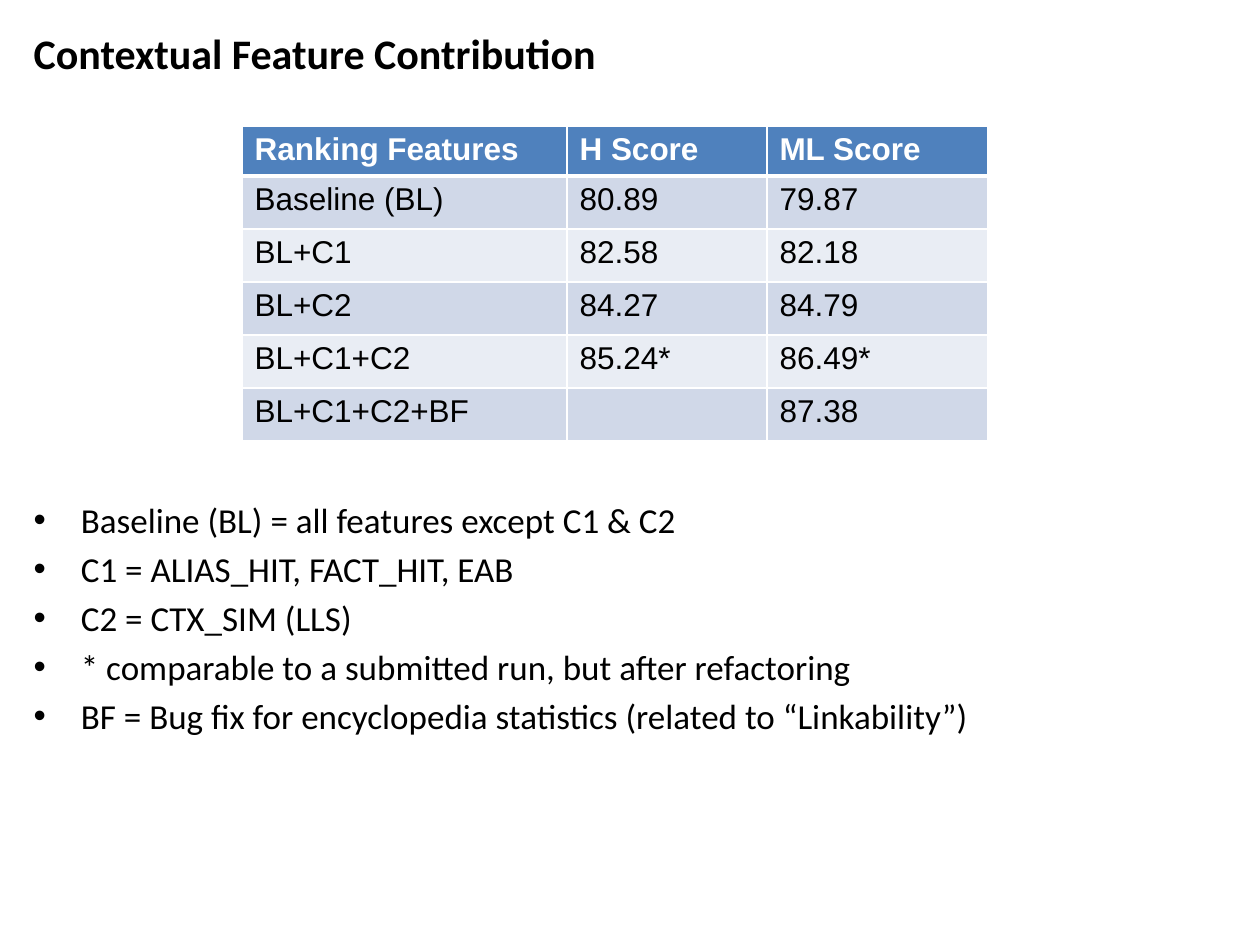
from lxml.etree import SubElement
from pptx import Presentation
from pptx.dml.color import RGBColor
from pptx.enum.text import MSO_ANCHOR, MSO_AUTO_SIZE, PP_ALIGN
from pptx.oxml.ns import qn
from pptx.util import Emu, Pt

PX = 914400 // 126
BLACK = RGBColor(0, 0, 0)
WHITE = RGBColor(255, 255, 255)
BLUE = RGBColor(0x4F, 0x81, 0xBD)
BANDS = RGBColor(0xE9, 0xED, 0xF4), RGBColor(0xD0, 0xD8, 0xE8)

SCORES = [
    ("Ranking Features", "H Score", "ML Score"),
    ("Baseline (BL)", "80.89", "79.87"),
    ("BL+C1", "82.58", "82.18"),
    ("BL+C2", "84.27", "84.79"),
    ("BL+C1+C2", "85.24*", "86.49*"),
    ("BL+C1+C2+BF", "", "87.38"),
]
WIDTHS = 325, 200, 221
HEIGHTS = [50] + [53] * 5
NOTES = [
    "Baseline (BL) = all features except C1 & C2",
    "C1 = ALIAS_HIT, FACT_HIT, EAB",
    "C2 = CTX_SIM (LLS)",
    "* comparable to a submitted run, but after refactoring",
    "BF = Bug fix for encyclopedia statistics (related to “Linkability”)",
]


def px(n):
    return Emu(n * PX)


def place(shape, box):
    shape.left, shape.top, shape.width, shape.height = map(px, box)


def style(para, font, size, color, bold=False):
    for run in para.runs:
        run.font.name = font
        run.font.size = Pt(size)
        run.font.color.rgb = color
        run.font.bold = bold


def add_title(slide, box, text):
    title = slide.shapes.title
    place(title, box)
    frame = title.text_frame
    frame.text = text
    frame.auto_size = MSO_AUTO_SIZE.NONE
    frame.vertical_anchor = MSO_ANCHOR.MIDDLE
    para = frame.paragraphs[0]
    para.alignment = PP_ALIGN.LEFT
    style(para, "Calibri", 24, BLACK, True)


def add_notes(slide, box, lines):
    """Fill the body placeholder; bullets and indents come from the template."""
    body = slide.placeholders[1]
    place(body, box)
    frame = body.text_frame
    frame.text = "\n".join(lines)
    frame.auto_size = MSO_AUTO_SIZE.NONE
    for para in frame.paragraphs:
        style(para, "Calibri", 20, BLACK)
    frame.paragraphs[0].space_before = Pt(0)


def add_rules(cell, low):
    """Draw white cell borders, with the bottom one low points wide."""
    props = cell._tc.get_or_add_tcPr()
    for side, size in ("L", 1), ("R", 1), ("T", 1), ("B", low):
        line = SubElement(props, qn(f"a:ln{side}"), w=str(Pt(size)))
        fill = SubElement(line, qn("a:solidFill"))
        SubElement(fill, qn("a:srgbClr"), val=str(WHITE))


def add_scores(slide, left, top):
    box = map(px, (left, top, sum(WIDTHS), sum(HEIGHTS)))
    table = slide.shapes.add_table(len(SCORES), len(WIDTHS), *box).table
    for col, width in zip(table.columns, WIDTHS):
        col.width = px(width)
    for i, (row, height) in enumerate(zip(table.rows, HEIGHTS)):
        row.height = px(height)
        head = i == 0
        for cell, text in zip(row.cells, SCORES[i]):
            cell.text = text
            style(cell.text_frame.paragraphs[0], "Arial", 18,
                  WHITE if head else BLACK, head)
            # The rule below the header is shared with the first row's top.
            add_rules(cell, 3 if head else 1)
            if i == 1:
                cell._tc.tcPr.find(qn("a:lnT")).set("w", str(Pt(3)))
            cell.fill.solid()
            cell.fill.fore_color.rgb = BLUE if head else BANDS[i % 2]


def main():
    deck = Presentation()
    deck.slide_width, deck.slide_height = px(1260), px(945)
    slide = deck.slides.add_slide(deck.slide_layouts[1])
    add_title(slide, (21, 21, 1008, 63), "Contextual Feature Contribution")
    add_notes(slide, (21, 492, 1197, 284), NOTES)
    add_scores(slide, 242, 126)
    deck.save("out.pptx")


if __name__ == "__main__":
    main()
